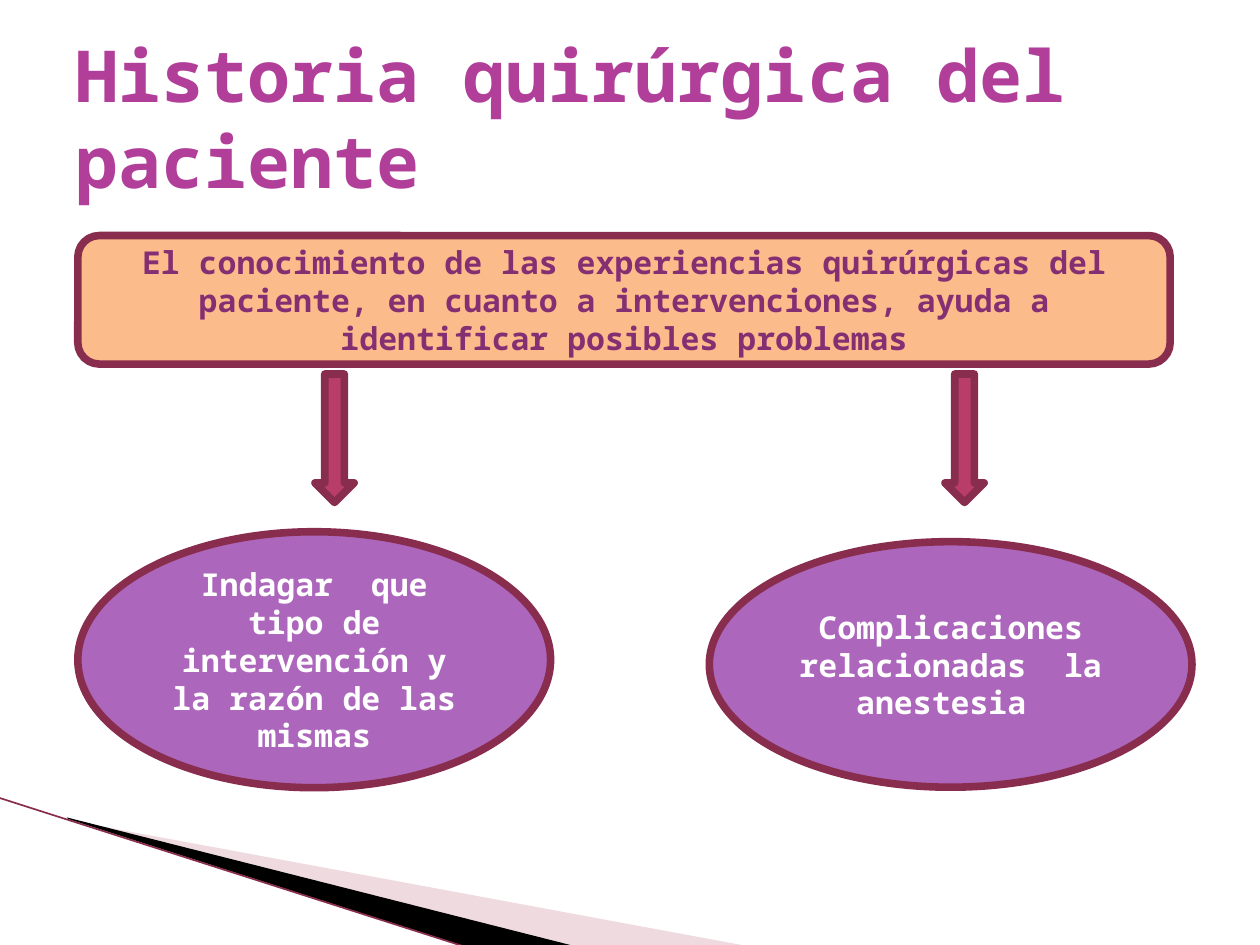
import dataclasses

import lxml.etree
import pptx
import pptx.dml.color
import pptx.enum.shapes
import pptx.enum.text
import pptx.oxml.ns
import pptx.util

Cm = pptx.util.Cm
SHAPE = pptx.enum.shapes.MSO_SHAPE
ALIGN = pptx.enum.text.PP_ALIGN


@dataclasses.dataclass(frozen=True)
class Theme:
    font: str = "Noto Sans Mono"
    title_size: int = 41
    body_size: int = 18
    border_width: float = 4.33
    hairline_width: float = 0.95
    title: str = "B13F9A"
    border: str = "882D4D"
    statement_fill: str = "FCBB8B"
    statement_text: str = "852F73"
    topic_fill: str = "AC66BB"
    topic_text: str = "FFFFFF"
    arrow_fill: str = "B83D68"
    pale_wedge: str = "D8A3AF"
    dark_wedge: str = "000000"


THEME = Theme()


def rgb(color):
    return pptx.dml.color.RGBColor.from_string(color)


def fill_solid(shape, color):
    shape.fill.solid()
    shape.fill.fore_color.rgb = rgb(color)
    shape.shadow.inherit = False


def write(shape, text, size, color, align):
    frame = shape.text_frame
    frame.word_wrap = True
    frame.vertical_anchor = pptx.enum.text.MSO_ANCHOR.MIDDLE
    paragraph = frame.paragraphs[0]
    paragraph.text = text
    paragraph.alignment = align
    font = paragraph.font
    font.name, font.size, font.bold = THEME.font, pptx.util.Pt(size), True
    font.color.rgb = rgb(color)


def add_wedge(slide, points, color, opacity=100):
    start, *rest = [(Cm(x), Cm(y)) for x, y in points]
    builder = slide.shapes.build_freeform(*start)
    builder.add_line_segments(rest, close=True)
    wedge = builder.convert_to_shape()
    fill_solid(wedge, color)
    wedge.line.fill.background()
    if opacity < 100:
        tint = wedge.fill._xPr.find(".//" + pptx.oxml.ns.qn("a:srgbClr"))
        alpha = lxml.etree.SubElement(tint, pptx.oxml.ns.qn("a:alpha"))
        alpha.set("val", str(opacity * 1000))


def add_hairline(slide, x1, y1, x2, y2):
    hairline = slide.shapes.add_connector(
        pptx.enum.shapes.MSO_CONNECTOR.STRAIGHT, Cm(x1), Cm(y1), Cm(x2), Cm(y2))
    hairline.line.color.rgb = rgb(THEME.border)
    hairline.line.width = pptx.util.Pt(THEME.hairline_width)
    lxml.etree.SubElement(hairline._element.spPr, pptx.oxml.ns.qn("a:effectLst"))


def add_title(slide, text, *box):
    title = slide.shapes.add_textbox(*map(Cm, box))
    write(title, text, THEME.title_size, THEME.title, ALIGN.LEFT)


def add_bordered(slide, kind, fill, *box):
    shape = slide.shapes.add_shape(kind, *map(Cm, box))
    fill_solid(shape, fill)
    shape.line.color.rgb = rgb(THEME.border)
    shape.line.width = pptx.util.Pt(THEME.border_width)
    return shape


def main():
    deck = pptx.Presentation()
    deck.slide_width, deck.slide_height = Cm(25.4), Cm(19.05)
    slide = deck.slides.add_slide(deck.slide_layouts[6])

    # Corner decoration
    add_wedge(slide, [(1.4, 16.54), (15.11, 19.08), (11.58, 19.08), (1.4, 16.51)],
              THEME.pale_wedge, opacity=40)
    add_wedge(slide, [(1.35, 16.48), (11.61, 19.08), (9.45, 19.1), (1.37, 16.51)],
              THEME.dark_wedge)
    add_hairline(slide, -0.03, 16.08, 9.42, 19.1)

    # Title and main statement
    add_title(slide, "Historia quirúrgica del paciente", 1.27, 0.76, 22.86, 3.18)
    statement = add_bordered(slide, SHAPE.ROUNDED_RECTANGLE, THEME.statement_fill,
                             1.57, 4.75, 22.02, 2.59)
    write(statement,
          "El conocimiento de las experiencias quirúrgicas del paciente, en cuanto a "
          "intervenciones, ayuda a identificar posibles problemas",
          THEME.body_size, THEME.statement_text, ALIGN.CENTER)

    # Topics that follow from the statement
    topics = [
        ("Indagar  que tipo de intervención y la razón de las mismas",
         (1.57, 10.72, 9.53, 5.16)),
        ("Complicaciones relacionadas  la anestesia ",
         (14.3, 10.92, 9.73, 4.95)),
    ]
    for text, box in topics:
        topic = add_bordered(slide, SHAPE.OVAL, THEME.topic_fill, *box)
        write(topic, text, THEME.body_size, THEME.topic_text, ALIGN.CENTER)

    # Arrows from the statement to the topics
    for left in (6.35, 19.05):
        add_bordered(slide, SHAPE.DOWN_ARROW, THEME.arrow_fill, left, 7.54, 0.79, 2.59)

    deck.save("out.pptx")


if __name__ == "__main__":
    main()
